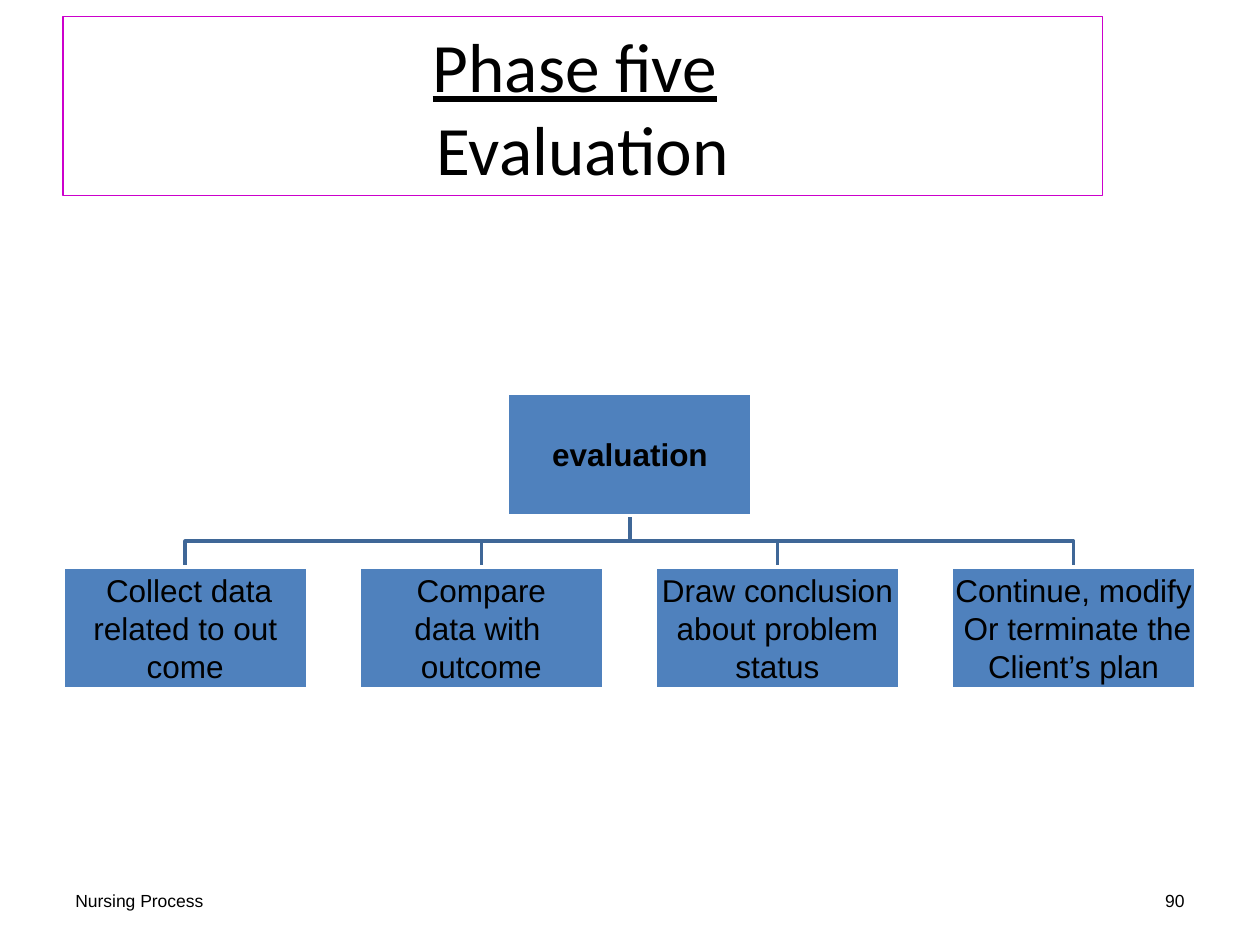
from pptx import Presentation
from pptx.dml.color import RGBColor
from pptx.enum.shapes import MSO_SHAPE
from pptx.enum.text import MSO_ANCHOR, PP_ALIGN
from pptx.util import Inches, Pt

# Content: each paragraph is a list of (text, underlined) runs or a string
TITLE = ("Phase five", "Evaluation")
ROOT = ["evaluation"]
STEPS = [
    ["Collect data ", "related to out come"],
    ["Compare", " data with outcome"],
    ["Draw conclusion", " about problem ", "status"],
    ["Continue, modify ", "Or terminate the ", "Client’s plan"],
]
FOOTER, PAGE = "Nursing Process", "90"

BLACK = RGBColor(0, 0, 0)
WHITE = RGBColor(0xFF, 0xFF, 0xFF)
BLUE = RGBColor(0x4F, 0x81, 0xBD)
BRANCH = RGBColor(0x3F, 0x67, 0x97)
MAGENTA = RGBColor(0xCC, 0, 0xCC)

# Grid of the chart
W, H = 10, 7.5
MARGIN = 0.5
BOX_W, BOX_H, PITCH = 1.94, 0.97, 2.35
ROOT_Y, STEP_Y = 3.12, 4.5
MID = W / 2

prs = Presentation()
prs.slide_width, prs.slide_height = Inches(W), Inches(H)
s = prs.slides.add_slide(prs.slide_layouts[6])


def add_run(p, text, size=18, font="Arial", bold=False, underline=False):
    r = p.add_run()
    r.text = text
    f = r.font
    f.size, f.name, f.bold, f.underline = Pt(size), font, bold, underline
    f.color.rgb = BLACK


def write(tf, lines, align=PP_ALIGN.LEFT, inset=None, rtl=False, **fmt):
    tf.word_wrap = True
    tf.vertical_anchor = MSO_ANCHOR.MIDDLE
    if inset is not None:
        tf.margin_left = tf.margin_right = Inches(inset)
        tf.margin_top = tf.margin_bottom = Inches(inset)
    for i, text in enumerate(lines):
        p = tf.add_paragraph() if i else tf.paragraphs[0]
        p.alignment = align
        if rtl:
            p._p.get_or_add_pPr().set("rtl", "1")
        add_run(p, text, **fmt)


def add_box(x, y, w, h, line, width, fill=None):
    sp = s.shapes.add_shape(MSO_SHAPE.RECTANGLE, Inches(x), Inches(y), Inches(w), Inches(h))
    sp.shadow.inherit = False
    if fill is None:
        sp.fill.background()
    else:
        sp.fill.solid()
        sp.fill.fore_color.rgb = fill
    sp.line.color.rgb = line
    sp.line.width = Pt(width)
    return sp


def add_node(x, y, lines, bold=False):
    sp = add_box(x, y, BOX_W, BOX_H, WHITE, 2, BLUE)
    write(sp.text_frame, lines, align=PP_ALIGN.CENTER, inset=0.01, rtl=True, bold=bold)


def add_branch(x):
    top = ROOT_Y + BOX_H
    bend = (top + STEP_Y) / 2
    fb = s.shapes.build_freeform(Inches(MID), Inches(top))
    points = [(MID, bend), (x, bend), (x, STEP_Y)]
    fb.add_line_segments([(Inches(a), Inches(b)) for a, b in points], close=False)
    sp = fb.convert_to_shape()
    sp.shadow.inherit = False
    sp.fill.background()
    sp.line.color.rgb = BRANCH
    sp.line.width = Pt(2)


# Footer and page number
for x, text, align in [(MARGIN, FOOTER, PP_ALIGN.LEFT), (7.17, PAGE, PP_ALIGN.RIGHT)]:
    tb = s.shapes.add_textbox(Inches(x), Inches(6.95), Inches(2.33), Inches(0.4))
    write(tb.text_frame, [text], align=align, size=10)

# Title: two lines, the first underlined
title = add_box(MARGIN, 0.13, 8.25, 1.42, MAGENTA, 0.75)
tf = title.text_frame
write(tf, TITLE[:1], align=PP_ALIGN.CENTER, size=39.6, font="Calibri", underline=True)
p = tf.paragraphs[0]
add_run(p, " ", size=39.6, font="Calibri")
p.add_line_break()
add_run(p, TITLE[1], size=39.6, font="Calibri")

# Branches behind, then the root and its steps
lefts = [MARGIN + i * PITCH for i in range(len(STEPS))]
for x in lefts:
    add_branch(x + BOX_W / 2)
add_node(MID - BOX_W / 2, ROOT_Y, ROOT, bold=True)
for x, lines in zip(lefts, STEPS):
    add_node(x, STEP_Y, lines)

prs.save("out.pptx")
